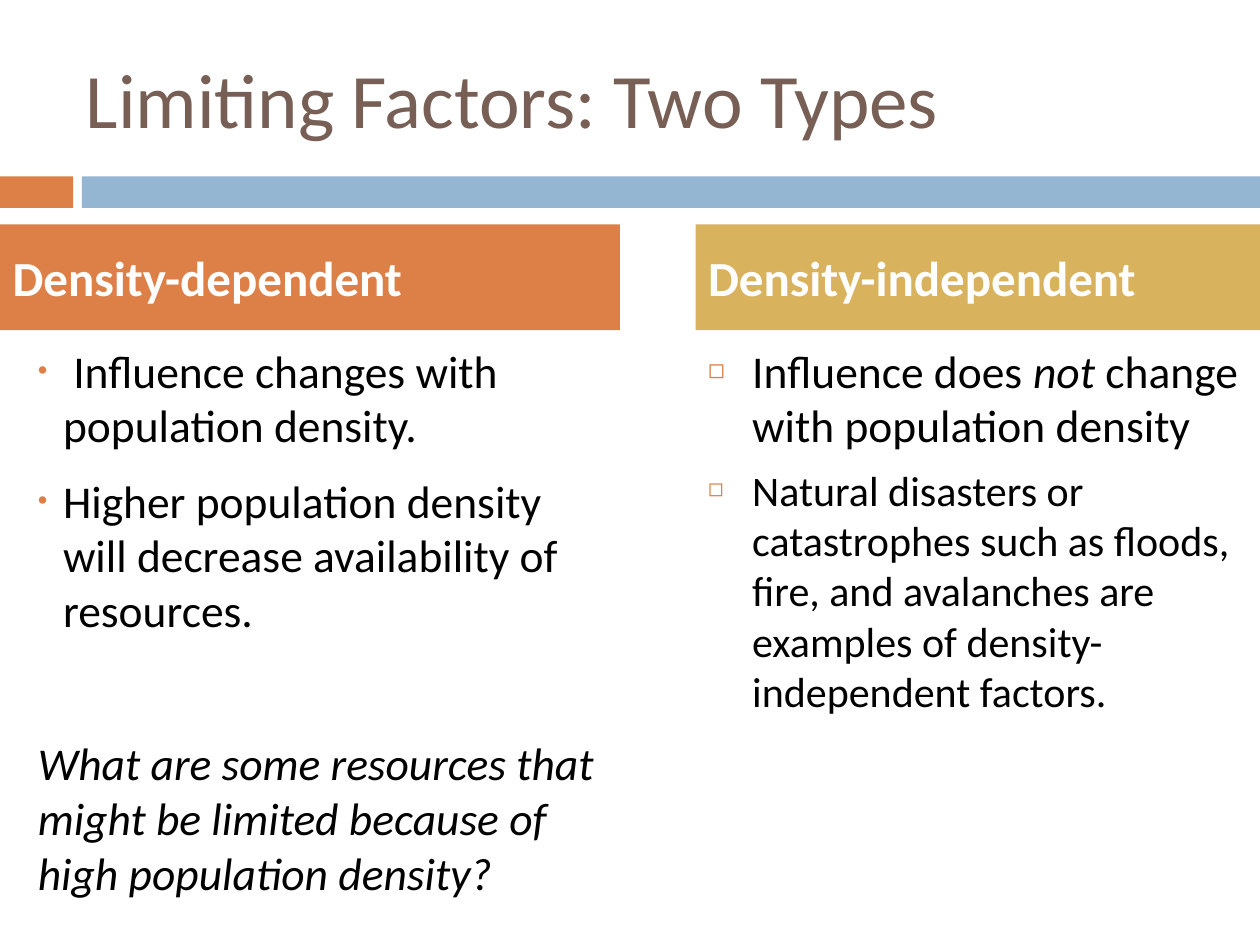
"""Build a slide that compares two types of limiting factors."""
from dataclasses import dataclass
from lxml.etree import SubElement
from pptx import Presentation
from pptx.dml.color import RGBColor as RGB
from pptx.enum.shapes import MSO_SHAPE as Kind
from pptx.enum.text import MSO_ANCHOR as Anchor, MSO_AUTO_SIZE as Auto, PP_ALIGN as Align
from pptx.oxml.ns import qn
from pptx.util import Inches, Pt


@dataclass(frozen=True)
class Theme:
    font: str = "Calibri"
    brown: str = "775F55"
    orange: str = "DD8047"
    blue: str = "94B6D2"
    gold: str = "D8B25C"
    white: str = "FFFFFF"
    black: str = "000000"
    title: int = 44
    head: int = 28
    body: int = 26
    small: int = 24


THEME = Theme()
WIDTH, HEIGHT = 10, 7.5
TITLE = "Limiting Factors: Two Types"
TITLE_BOX = (0.58, 0.3, 8.92, 0.95)
BAR_TOP, BAR_TALL = 1.4, 0.25
BARS = [(0, 0.58, THEME.orange), (0.65, 9.35, THEME.blue)]
HEAD_TOP, HEAD_TALL = 1.78, 0.84
BODY_TOP, BODY_TALL = 2.67, 4.69

COLUMNS = [
    dict(head="Density-dependent", left=0, right=4.92, inset=0.2,
         fill=THEME.orange, mark="•", indent=0.2, items=[
             dict(runs=[(" Influence changes with \vpopulation density.", False)]),
             dict(runs=[("Higher population density will decrease availability "
                         "of resources.", False)], gap=12),
             dict(runs=[("What are some resources that might be limited because "
                         "of high population density?", True)], gap=56.5, plain=True),
         ]),
    dict(head="Density-independent", left=5.52, right=WIDTH, inset=0,
         fill=THEME.gold, mark="◻", indent=0.35, items=[
             dict(runs=[("Influence does ", False), ("not", True),
                        (" change with population density", False)]),
             dict(runs=[("Natural disasters or catastrophes such as floods, fire, "
                         "and avalanches are examples of density-independent "
                         "factors.", False)], size=THEME.small),
         ]),
]


def place(shape, left, top, width, height):
    shape.left, shape.top = Inches(left), Inches(top)
    shape.width, shape.height = Inches(width), Inches(height)


def paint(shape, color):
    shape.fill.solid()
    shape.fill.fore_color.rgb = RGB.from_string(color)


def style(para, size, color, bold=False):
    font = para.font
    font.name, font.size, font.bold = THEME.font, Pt(size), bold
    font.color.rgb = RGB.from_string(color)
    para.alignment = Align.LEFT


def bullet(para, mark, indent):
    props = para._p.get_or_add_pPr()
    props.set("marL", str(Inches(indent)))
    props.set("indent", str(-Inches(indent)))
    if not mark:
        SubElement(props, qn("a:buNone"))
        return
    tint = SubElement(props, qn("a:buClr"))
    SubElement(tint, qn("a:srgbClr"), val=THEME.orange)
    SubElement(props, qn("a:buSzPct"), val="60000")
    SubElement(props, qn("a:buChar"), char=mark)


def label(shape, text, size, color, bold=False):
    frame = shape.text_frame
    frame.text = text
    frame.auto_size, frame.vertical_anchor = Auto.NONE, Anchor.MIDDLE
    style(frame.paragraphs[0], size, color, bold)


def fill_list(shape, col):
    frame = shape.text_frame
    frame.auto_size, frame.vertical_anchor = Auto.NONE, Anchor.TOP
    for num, item in enumerate(col["items"]):
        para = frame.add_paragraph() if num else frame.paragraphs[0]
        plain = item.get("plain")
        bullet(para, "" if plain else col["mark"], 0 if plain else col["indent"])
        para.space_before = Pt(item.get("gap", 7))
        style(para, item.get("size", THEME.body), THEME.black)
        if len(item["runs"]) == 1:
            para.text, para.font.italic = item["runs"][0]
            continue
        for text, slant in item["runs"]:
            run = para.add_run()
            run.text, run.font.italic = text, slant


def main():
    deck = Presentation()
    deck.slide_width, deck.slide_height = Inches(WIDTH), Inches(HEIGHT)
    slide = deck.slides.add_slide(deck.slide_layouts.get_by_name("Comparison"))
    for left, width, color in BARS:
        bar = slide.shapes.add_shape(Kind.RECTANGLE, 0, 0, 0, 0)
        place(bar, left, BAR_TOP, width, BAR_TALL)
        paint(bar, color)
        bar.line.fill.background()
        bar.shadow.inherit = False
    title, *slots = slide.placeholders
    place(title, *TITLE_BOX)
    label(title, TITLE, THEME.title, THEME.brown)
    for col, head, body in zip(COLUMNS, slots[::2], slots[1::2]):
        left, width = col["left"], col["right"] - col["left"]
        place(head, left, HEAD_TOP, width, HEAD_TALL)
        paint(head, col["fill"])
        label(head, col["head"], THEME.head, THEME.white, True)
        head.text_frame.paragraphs[0].space_before = Pt(7)
        place(body, left + col["inset"], BODY_TOP, width - col["inset"], BODY_TALL)
        fill_list(body, col)
    deck.save("out.pptx")


if __name__ == "__main__":
    main()
